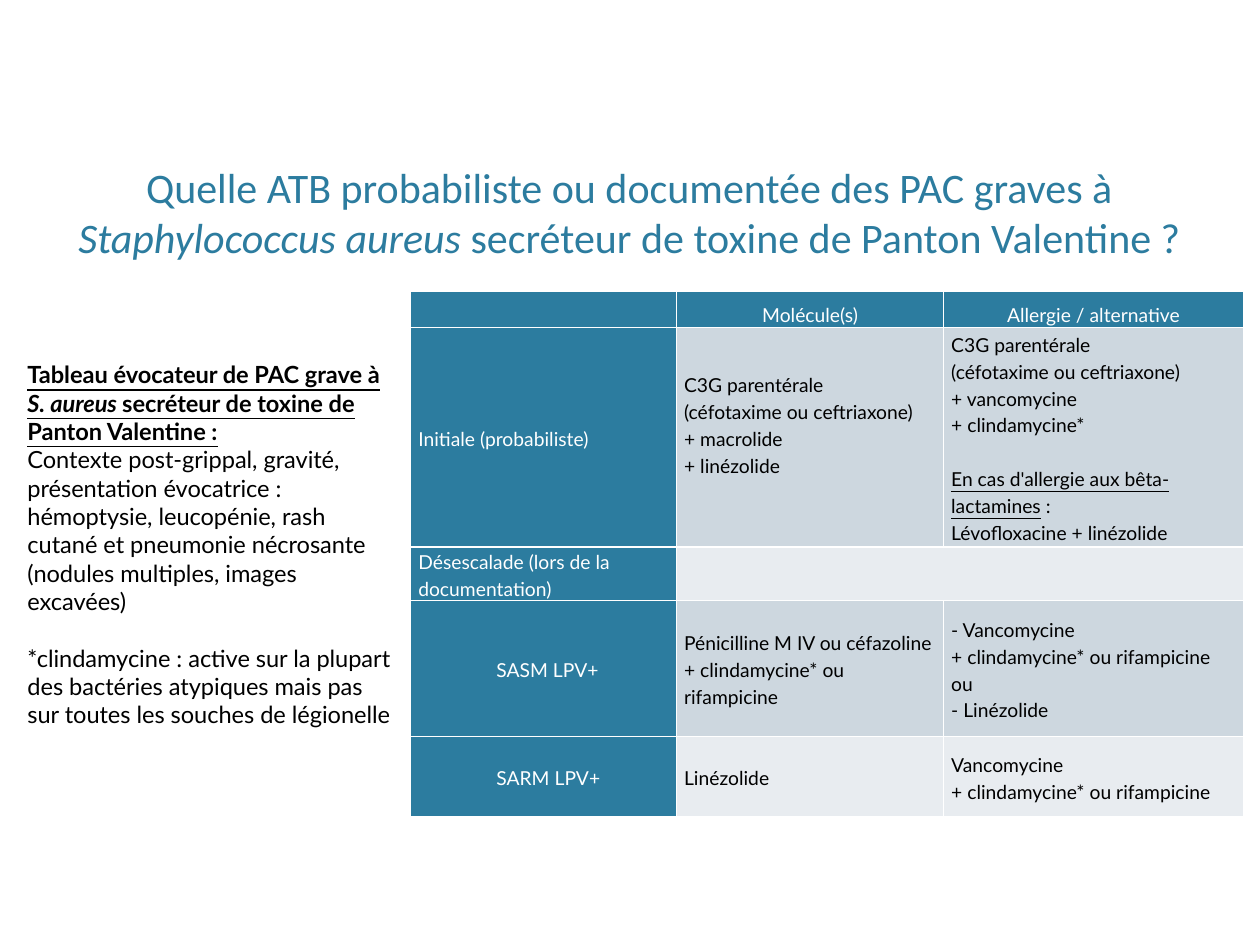
from pptx import Presentation
from pptx.dml.color import RGBColor
from pptx.enum.text import MSO_ANCHOR, MSO_AUTO_SIZE, PP_ALIGN
from pptx.util import Inches, Pt

CENTER, LEFT = PP_ALIGN.CENTER, PP_ALIGN.LEFT
MIDDLE, BOTTOM = MSO_ANCHOR.MIDDLE, MSO_ANCHOR.BOTTOM
NO_FIT, GROW = MSO_AUTO_SIZE.NONE, MSO_AUTO_SIZE.SHAPE_TO_FIT_TEXT

TEAL = RGBColor(0x2C, 0x7C, 0x9F)
BAND_DARK = RGBColor(0xCD, 0xD7, 0xDF)
BAND_LIGHT = RGBColor(0xE8, 0xEC, 0xF0)
WHITE = RGBColor(0xFF, 0xFF, 0xFF)
BLACK = RGBColor(0, 0, 0)

TITLE = [("Quelle ATB probabiliste ou documentée des PAC graves à ", ""),
         ("Staphylococcus aureus ", "i"),
         ("secréteur de toxine de Panton Valentine ?", "")]

# A paragraph is a string or a list of (text, marks): b bold, i italic, u underlined
CLINICAL_PICTURE = [
    [("Tableau évocateur de PAC grave à ", "bu"), ("S. aureus ", "biu"),
     ("secréteur de toxine de Panton Valentine :", "bu")],
    "Contexte post-grippal, gravité, présentation évocatrice : hémoptysie, "
    "leucopénie, rash cutané et pneumonie nécrosante (nodules multiples, images excavées)",
    "*clindamycine : active sur la plupart des bactéries atypiques mais pas "
    "sur toutes les souches de légionelle",
]

C3G = ["C3G parentérale", "(céfotaxime ou ceftriaxone)"]
CLINDA_OR_RIFA = "+ clindamycine* ou rifampicine"
TREATMENTS = [
    [[], ["Molécule(s)"], ["Allergie / alternative"]],
    [["Initiale (probabiliste)"],
     C3G + ["+ macrolide", "+ linézolide"],
     C3G + ["+ vancomycine", "+ clindamycine*",
            [("En cas d'allergie aux bêta-lactamines", "u"), (" :", "")],
            "Lévofloxacine + linézolide"]],
    [["Désescalade (lors de la documentation)"], [], []],
    [["SASM LPV+"],
     ["Pénicilline M IV ou céfazoline", CLINDA_OR_RIFA],
     ["- Vancomycine", CLINDA_OR_RIFA, "ou", "- Linézolide"]],
    [["SARM LPV+"], ["Linézolide"], ["Vancomycine", CLINDA_OR_RIFA]],
]
COLUMN_WIDTHS = [2.11, 2.12, 2.38]
ROW_HEIGHTS = [0.29, 1.74, 0.42, 1.08, 0.64]
GERM_ROWS = (3, 4)
CELL_LINE = 15.3


class SlideBuilder:
    def __init__(self, presentation):
        self.slide = presentation.slides.add_slide(presentation.slide_layouts[5])
        self.title_font = "Calibri"
        self.body_font = "Lato"
        self.cell_size = 11

    def set_paragraphs(self, frame, paragraphs, font, size, color, align=LEFT, spacing=None):
        for index, content in enumerate(paragraphs):
            paragraph = frame.paragraphs[0] if index == 0 else frame.add_paragraph()
            paragraph.alignment = align
            if spacing:
                paragraph.line_spacing = spacing
            pieces = [(content, "")] if isinstance(content, str) else content
            for text, marks in pieces:
                run = paragraph.add_run()
                run.text = text
                run.font.name = font
                run.font.size = Pt(size)
                run.font.color.rgb = color
                run.font.bold = "b" in marks
                run.font.italic = "i" in marks
                run.font.underline = "u" in marks

    def title(self, pieces, left, top, width, height):
        title = self.slide.shapes.title
        title.left, title.top = Inches(left), Inches(top)
        title.width, title.height = Inches(width), Inches(height)
        frame = title.text_frame
        frame.auto_size = NO_FIT
        frame.vertical_anchor = BOTTOM
        self.set_paragraphs(frame, [pieces], self.title_font, 24, TEAL, CENTER)

    def text(self, paragraphs, left, top, width, height, size):
        box = self.slide.shapes.add_textbox(
            Inches(left), Inches(top), Inches(width), Inches(height))
        frame = box.text_frame
        frame.word_wrap = True
        frame.auto_size = GROW
        self.set_paragraphs(frame, paragraphs, self.body_font, size, BLACK)
        return frame

    def table(self, rows, left, top, widths, heights):
        table = self.slide.shapes.add_table(
            len(rows), len(widths), Inches(left), Inches(top),
            Inches(sum(widths)), Inches(sum(heights))).table
        for column, width in zip(table.columns, widths):
            column.width = Inches(width)
        for r, (row, height) in enumerate(zip(rows, heights)):
            table.rows[r].height = Inches(height)
            for c, paragraphs in enumerate(row):
                self.cell(table.cell(r, c), paragraphs, r, c)
        return table

    def cell(self, cell, paragraphs, r, c):
        is_header = r == 0 or c == 0
        band = BAND_DARK if r % 2 else BAND_LIGHT
        cell.fill.solid()
        cell.fill.fore_color.rgb = TEAL if is_header else band
        cell.vertical_anchor = MIDDLE
        cell.margin_left = cell.margin_right = Inches(0.06)
        cell.margin_top = cell.margin_bottom = 0
        if not paragraphs:
            # Keeps the empty line from stretching its row
            end_mark = cell.text_frame.paragraphs[0]._p.get_or_add_endParaRPr()
            end_mark.set("sz", str(self.cell_size * 100))
        self.set_paragraphs(cell.text_frame, paragraphs, self.body_font, self.cell_size,
                            WHITE if is_header else BLACK,
                            CENTER if r == 0 else LEFT, 1.5 if r == 0 else 1.15)


def main():
    presentation = Presentation()
    presentation.slide_width, presentation.slide_height = Inches(10), Inches(7.5)
    builder = SlideBuilder(presentation)
    builder.title(TITLE, 0.12, 1.03, 9.75, 1.1)

    treatments = builder.table(TREATMENTS, 3.26, 2.31, COLUMN_WIDTHS, ROW_HEIGHTS)
    treatments.cell(2, 1).merge(treatments.cell(2, 2))
    for row in GERM_ROWS:
        treatments.cell(row, 0).margin_left = Inches(0.68)
    treatments.cell(1, 1).margin_bottom = Pt(CELL_LINE)
    allergy = treatments.cell(1, 2).text_frame.paragraphs[4]
    allergy.space_before = Pt(CELL_LINE)

    clinical = builder.text(CLINICAL_PICTURE, 0.12, 2.81, 3.14, 3.51, 13.5)
    clinical.paragraphs[2].space_before = Pt(16.2)
    presentation.save("out.pptx")


if __name__ == "__main__":
    main()
